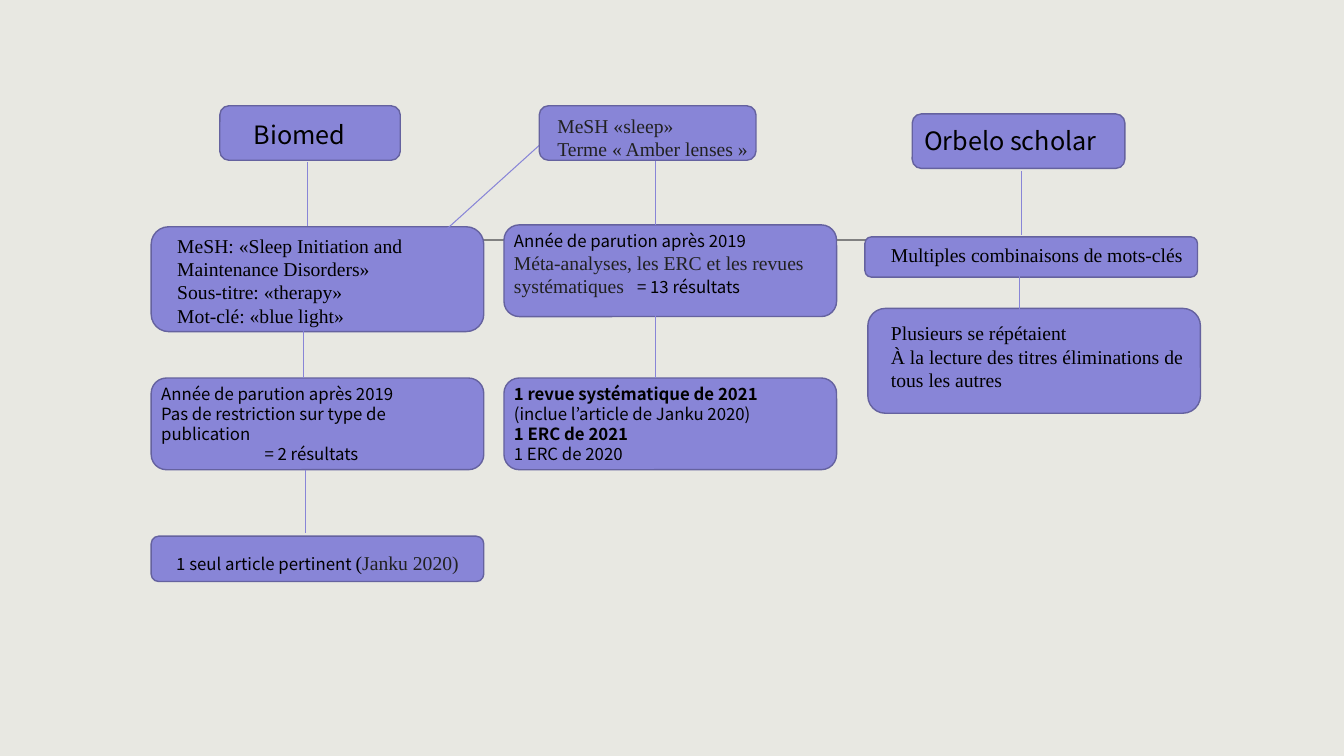
from dataclasses import dataclass

from lxml import etree
from pptx import Presentation
from pptx.dml.color import RGBColor
from pptx.enum.shapes import MSO_CONNECTOR, MSO_SHAPE
from pptx.enum.text import PP_ALIGN
from pptx.oxml.ns import qn
from pptx.util import Pt

ROUNDED = MSO_SHAPE.ROUNDED_RECTANGLE
STRAIGHT = MSO_CONNECTOR.STRAIGHT
LEFT, CENTER = PP_ALIGN.LEFT, PP_ALIGN.CENTER

BACKGROUND = RGBColor(0xE8, 0xE8, 0xE2)
PURPLE = RGBColor(0x88, 0x85, 0xD7)
BORDER = RGBColor(0x65, 0x62, 0x9F)
GRAY = RGBColor(0x80, 0x80, 0x80)
BLACK = RGBColor(0, 0, 0)
CHARCOAL = RGBColor(0x21, 0x21, 0x21)

WIDE, TEXT_WIDE, DROP = 237.6, 229, 45.4
LINE_RATIO = 1.19


@dataclass
class TextStyle:
    name: str
    size: float
    color: RGBColor = BLACK
    bold: bool = False

    def apply(self, font):
        font.name = self.name
        font.size = Pt(self.size)
        font.color.rgb = self.color
        font.bold = self.bold


HEADING = TextStyle("Noto Sans CJK JP", 18)
SANS = TextStyle("Noto Sans CJK JP", 12)
SANS_BOLD = TextStyle("Noto Sans CJK JP", 12, bold=True)
SERIF = TextStyle("Times New Roman", 14)
SERIF_DARK = TextStyle("Times New Roman", 14, CHARCOAL)


class FlowSlide:
    def __init__(self, deck):
        self.page = deck.slides.add_slide(deck.slide_layouts[6])
        self.page.background.fill.solid()
        self.page.background.fill.fore_color.rgb = BACKGROUND

    def box(self, left, top, width, height):
        box = self.page.shapes.add_shape(ROUNDED, Pt(left), Pt(top), Pt(width), Pt(height))
        box.shadow.inherit = False
        box.fill.solid()
        box.fill.fore_color.rgb = PURPLE
        box.line.color.rgb = BORDER
        box.line.width = Pt(1)

    def line(self, x1, y1, x2, y2, color=PURPLE, weight=0.75):
        line = self.page.shapes.add_connector(STRAIGHT, Pt(x1), Pt(y1), Pt(x2), Pt(y2))
        line.line.color.rgb = color
        line.line.width = Pt(weight)
        etree.SubElement(line._element.spPr, qn("a:effectLst"))

    def drop(self, x, top):
        self.line(x, top, x, top + DROP)

    def text(self, left, top, width, height, *paras):
        box = self.page.shapes.add_textbox(Pt(left), Pt(top), Pt(width), Pt(height))
        frame = box.text_frame
        frame.word_wrap = True
        for index, (align, *spans) in enumerate(paras):
            para = frame.add_paragraph() if index else frame.paragraphs[0]
            para.alignment = align
            para.line_spacing = Pt(round(LINE_RATIO * max(style.size for _, style in spans), 1))
            if len(spans) == 1:
                spans[0][1].apply(para.font)
            for words, style in spans:
                span = para.add_run()
                span.text = words
                if len(spans) > 1:
                    style.apply(span.font)
        return frame

    def tab_stop(self, para, position):
        stops = etree.SubElement(para._p.get_or_add_pPr(), qn("a:tabLst"))
        etree.SubElement(stops, qn("a:tab"), pos=str(Pt(position)), algn="l")


def draw_first_database(slide):
    slide.box(157, 75.6, 128.9, 38.9)
    slide.text(174.2, 82.1, 108.7, 28.8, (LEFT, ("Biomed", HEADING)))
    slide.drop(219.6, 115.9)
    slide.box(108, 162, WIDE, 74.9)
    slide.text(119.5, 163.4, TEXT_WIDE, 74.9,
               (LEFT, ("MeSH: «Sleep Initiation and Maintenance Disorders»", SERIF)),
               (LEFT, ("Sous-titre: «therapy»", SERIF)),
               (LEFT, ("Mot-clé: «blue light»", SERIF)))
    slide.box(108, 270, WIDE, 65.5)
    slide.text(108, 270.7, TEXT_WIDE, 79.9,
               (LEFT, ("Année de parution après 2019", SANS)),
               (LEFT, ("Pas de restriction sur type de publication", SANS)),
               (CENTER, ("= 2 résultats", SANS)))
    slide.box(108, 383, WIDE, 32.4)
    slide.text(112.3, 390.2, TEXT_WIDE, 24.5,
               (CENTER, ("1 seul article pertinent ", SANS), ("(", SERIF),
                ("Janku 2020)", SERIF_DARK)))
    slide.drop(218.2, 335.5)
    slide.drop(216.7, 224.6)


def draw_second_query(slide):
    slide.line(391, 98.6, 301, 180)
    slide.box(385.2, 75.6, 154.8, 38.9)
    slide.text(391, 77.8, 154.8, 41,
               (LEFT, ("MeSH «sleep»", SERIF_DARK)),
               (LEFT, ("Terme « Amber lenses »", SERIF_DARK)))
    slide.box(360, 160.6, WIDE, 65.5)
    criteria = slide.text(
        360, 161.3, TEXT_WIDE, 70.6,
        (LEFT, ("Année de parution après 2019", SANS)),
        (LEFT, ("Méta-analyses, les ERC et les revues systématiques\t", SERIF_DARK),
         ("= 13 résultats", SANS)))
    slide.tab_stop(criteria.paragraphs[1], 88)
    slide.drop(468, 115.2)
    slide.box(360, 270, WIDE, 65.5)
    slide.text(360, 270.7, TEXT_WIDE, 79.9,
               (LEFT, ("1 revue systématique de 2021 ", SANS_BOLD),
                ("(inclue l’article de Janku 2020)", SANS)),
               (LEFT, ("1 ERC de 2021", SANS_BOLD)),
               (LEFT, ("1 ERC de 2020", SANS)))
    slide.drop(468, 224.6)


def draw_scholar_search(slide):
    slide.box(651.6, 81.4, 151.9, 38.9)
    slide.text(653, 86.4, 151.9, 28.8, (LEFT, ("Orbelo scholar", HEADING)))
    slide.drop(729.4, 122.4)
    slide.box(617.8, 169.2, WIDE, 28.8)
    slide.text(629.3, 169.9, TEXT_WIDE, 24.5,
               (LEFT, ("Multiples combinaisons de mots-clés", SERIF)))
    slide.box(619.9, 220.3, WIDE, 74.9)
    slide.text(629.3, 226.1, TEXT_WIDE, 58.3,
               (LEFT, ("Plusieurs se répétaient", SERIF)),
               (LEFT, ("À la lecture des titres éliminations de", SERIF)),
               (LEFT, ("tous les autres", SERIF)))
    slide.drop(727.9, 183.6)


def main():
    deck = Presentation()
    deck.slide_width, deck.slide_height = Pt(960), Pt(540)
    slide = FlowSlide(deck)
    slide.line(151.2, 171.4, 841.7, 171.4, GRAY, 2)
    draw_first_database(slide)
    draw_second_query(slide)
    draw_scholar_search(slide)
    deck.save("out.pptx")


if __name__ == "__main__":
    main()
